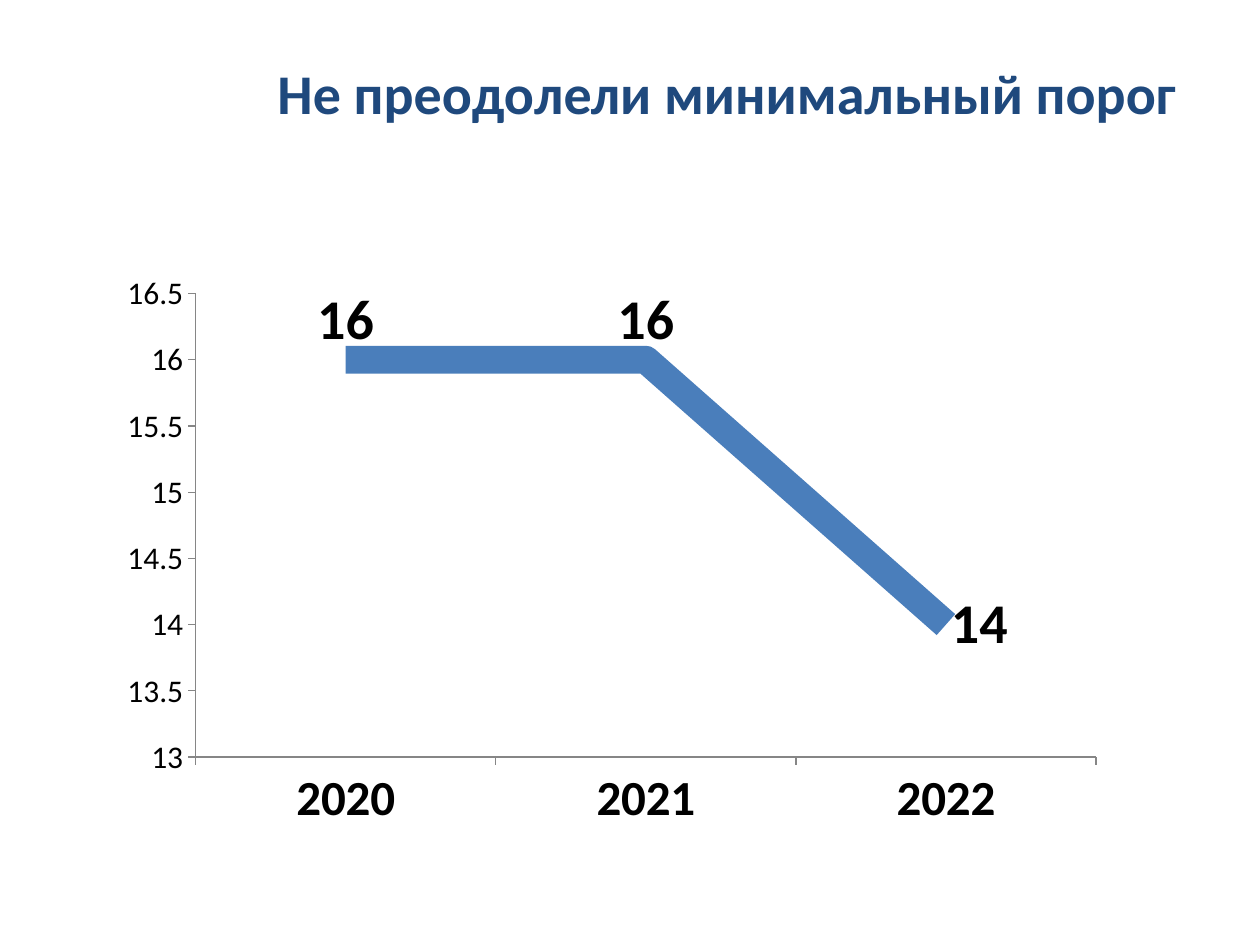
from dataclasses import dataclass

from lxml.etree import SubElement
from pptx import Presentation
from pptx.chart.data import CategoryChartData
from pptx.dml.color import RGBColor
from pptx.enum.chart import XL_CHART_TYPE, XL_LABEL_POSITION, XL_MARKER_STYLE, XL_TICK_MARK
from pptx.enum.text import MSO_ANCHOR, PP_ALIGN
from pptx.oxml.ns import qn
from pptx.util import Inches, Pt


@dataclass(frozen=True)
class Theme:
    font: str = "Calibri"
    title: RGBColor = RGBColor(0x1F, 0x49, 0x7D)
    text: RGBColor = RGBColor(0, 0, 0)
    line: RGBColor = RGBColor(0x4A, 0x7E, 0xBB)
    axis: RGBColor = RGBColor(0x86, 0x86, 0x86)
    large: Pt = Pt(32)
    category: Pt = Pt(28)
    body: Pt = Pt(18)
    line_width: Pt = Pt(16)


THEME = Theme()


def style_font(font, size, color, bold=False):
    font.name = THEME.font
    font.size = size
    font.bold = bold
    font.color.rgb = color


def add_title(page, area, words):
    box = page.shapes.add_textbox(*area)
    frame = box.text_frame
    frame.word_wrap = True
    frame.vertical_anchor = MSO_ANCHOR.MIDDLE
    para = frame.paragraphs[0]
    para.alignment = PP_ALIGN.RIGHT
    span = para.add_run()
    span.text = words
    style_font(span.font, THEME.large, THEME.title, bold=True)


def place_plot(chart, **shares):
    """Fix the inner plot area as shares of the chart's size."""
    plot_area = chart.plots[0]._element.getparent()
    layout = plot_area.find(qn("c:layout"))
    if layout is None:
        layout = SubElement(plot_area, qn("c:layout"))
        plot_area.insert(0, layout)
    manual = SubElement(layout, qn("c:manualLayout"))
    settings = {"layoutTarget": "inner", "xMode": "edge", "yMode": "edge", **shares}
    for name, value in settings.items():
        SubElement(manual, qn(f"c:{name}")).set("val", str(value))


def style_axis(axis, size, bold=False):
    axis.has_major_gridlines = False
    axis.major_tick_mark = XL_TICK_MARK.OUTSIDE
    axis.minor_tick_mark = XL_TICK_MARK.NONE
    axis.format.line.color.rgb = THEME.axis
    axis.format.line.width = Pt(0.75)
    style_font(axis.tick_labels.font, size, THEME.text, bold)


def add_trend_chart(page, area, results):
    data = CategoryChartData()
    data.categories = list(results)
    data.add_series("Series 1", list(results.values()))
    chart = page.shapes.add_chart(XL_CHART_TYPE.LINE, *area, data).chart
    chart.has_legend = False
    chart.has_title = False
    style_font(chart.font, THEME.body, THEME.text)
    place_plot(chart, x=0.09, y=0.05, w=0.89, h=0.8)

    style_axis(chart.category_axis, THEME.category, bold=True)
    style_axis(chart.value_axis, THEME.body)
    chart.value_axis.minimum_scale = 13
    chart.value_axis.maximum_scale = 16.5
    chart.value_axis.major_unit = 0.5
    chart.value_axis.tick_labels.number_format = "General"
    chart.value_axis.tick_labels.number_format_is_linked = False

    chart.plots[0].vary_by_categories = False
    series = chart.plots[0].series[0]
    series.smooth = False
    series.marker.style = XL_MARKER_STYLE.NONE
    series.format.line.color.rgb = THEME.line
    series.format.line.width = THEME.line_width
    positions = [XL_LABEL_POSITION.ABOVE, XL_LABEL_POSITION.ABOVE, XL_LABEL_POSITION.RIGHT]
    for index, position in enumerate(positions):
        label = series.points[index].data_label
        style_font(label.font, THEME.large, THEME.text, bold=True)
        label.position = position


def main():
    deck = Presentation()
    deck.slide_width, deck.slide_height = Inches(10), Inches(7.5)
    page = deck.slides.add_slide(deck.slide_layouts[6])
    title_area = [Inches(length) for length in (0.44, 0.11, 9, 1.25)]
    chart_area = [Inches(length) for length in (0.83, 2.1, 8.03, 4.6)]
    add_title(page, title_area, "Не преодолели минимальный порог")
    add_trend_chart(page, chart_area, {"2020": 16, "2021": 16, "2022": 14})
    deck.save("out.pptx")


if __name__ == "__main__":
    main()
